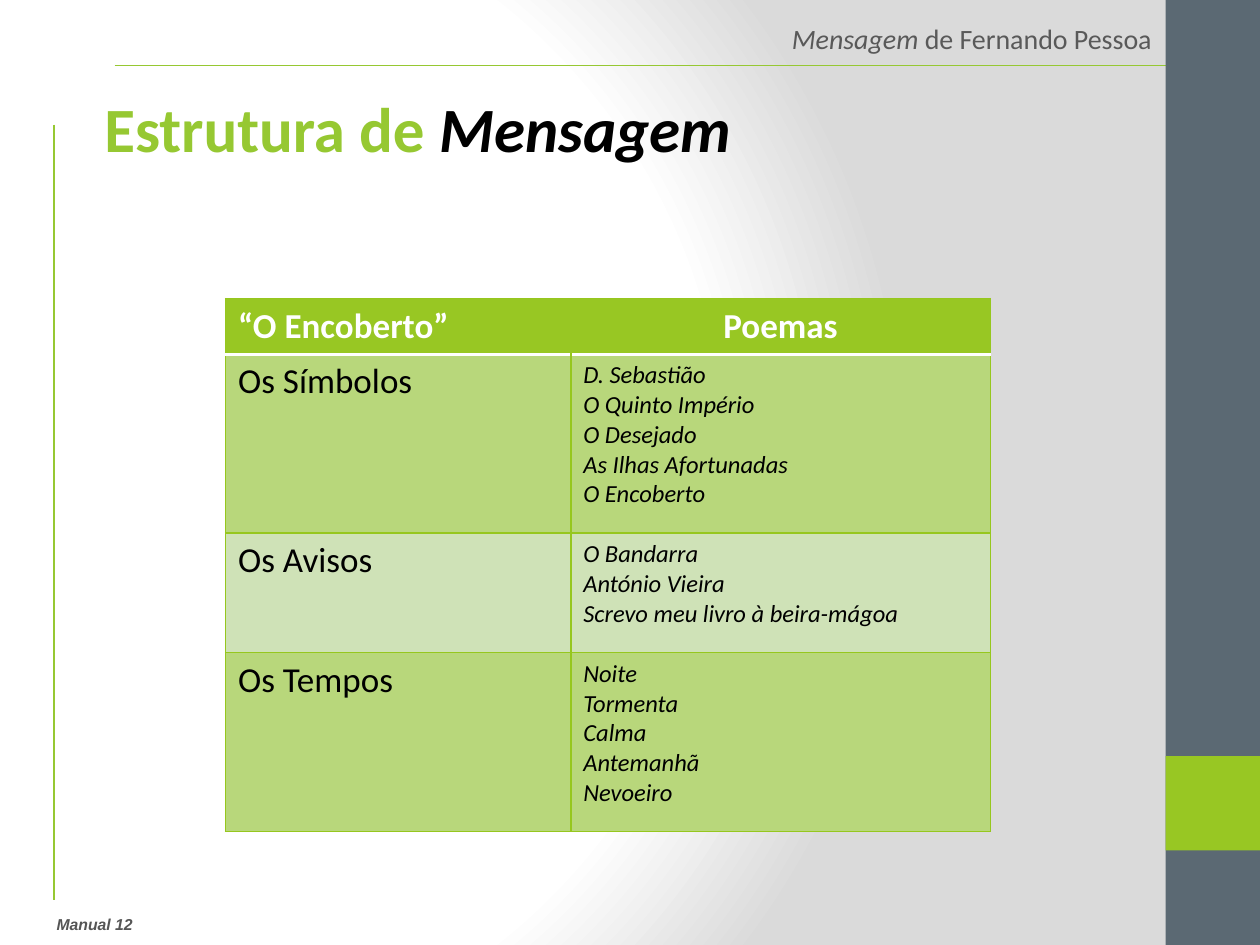
from lxml import etree
from pptx import Presentation
from pptx import oxml
from pptx.dml.color import RGBColor
from pptx.enum import shapes, text
from pptx.oxml import ns
from pptx.util import Inches, Pt

COLORS = {
    "lime": "98C723", "rule": "96C832", "border": "96C71E", "slate": "5B6973",
    "band_dark": "B8D77B", "band_light": "CFE2B7", "footer": "555555",
    "heading": "595959", "white": "FFFFFF", "black": "000000", "grey": "DADADA",
}
POEMS = [
    ("Os Símbolos", ["D. Sebastião", "O Quinto Império", "O Desejado",
                     "As Ilhas Afortunadas", "O Encoberto"]),
    ("Os Avisos", ["O Bandarra", "António Vieira", "Screvo meu livro à beira-mágoa"]),
    ("Os Tempos", ["Noite", "Tormenta", "Calma", "Antemanhã", "Nevoeiro"]),
]


class Deck:
    """Holds the style and the current slide."""

    font = "Calibri"

    def __init__(self):
        self.prs = Presentation()
        self.prs.slide_width, self.prs.slide_height = Inches(10), Inches(7.5)
        self.slide = self.prs.slides.add_slide(self.prs.slide_layouts[6])

    def color(self, name):
        return RGBColor.from_string(COLORS[name])

    def background(self, stops):
        """Radial gradient from (percent, colour name) stops."""
        self.slide.background.fill.solid()
        holder = self.slide.element.find(".//" + ns.qn("p:bgPr"))
        stop_xml = "".join(
            f'<a:gs pos="{pos * 1000}"><a:srgbClr val="{COLORS[name]}"/></a:gs>'
            for pos, name in stops)
        holder.replace(holder[0], oxml.parse_xml(
            f'<a:gradFill {ns.nsdecls("a")} rotWithShape="1"><a:gsLst>{stop_xml}</a:gsLst>'
            '<a:path path="circle"><a:fillToRect l="20000" t="50000" r="100000" b="50000"/>'
            '</a:path></a:gradFill>'))

    def rule(self, x1, y1, x2, y2):
        line = self.slide.shapes.add_connector(
            shapes.MSO_CONNECTOR.STRAIGHT, Inches(x1), Inches(y1), Inches(x2), Inches(y2))
        line.line.color.rgb = self.color("rule")
        line.line.width = Pt(1)
        etree.SubElement(line.element.spPr, ns.qn("a:effectLst"))

    def block(self, x, y, w, h, fill):
        rect = self.slide.shapes.add_shape(
            shapes.MSO_SHAPE.RECTANGLE, Inches(x), Inches(y), Inches(w), Inches(h))
        rect.shadow.inherit = False
        rect.fill.solid()
        rect.fill.fore_color.rgb = self.color(fill)
        rect.line.fill.background()

    def run(self, paragraph, words, size, color, bold=False, italic=False, font=None):
        run = paragraph.add_run()
        run.text = words
        run.font.name = font or self.font
        run.font.size = Pt(size)
        run.font.bold, run.font.italic = bold, italic
        run.font.color.rgb = self.color(color)

    def label(self, x, y, w, h, runs, align=text.PP_ALIGN.LEFT):
        box = self.slide.shapes.add_textbox(Inches(x), Inches(y), Inches(w), Inches(h))
        box.text_frame.word_wrap = True
        paragraph = box.text_frame.paragraphs[0]
        paragraph.alignment = align
        for style in runs:
            self.run(paragraph, **style)

    def cell(self, cell, lines, fill, borders, align=text.PP_ALIGN.LEFT, **style):
        """Borders map a side (L, R, T, B) to (colour, points), or to None for no line."""
        props = cell._tc.get_or_add_tcPr()
        for side in "LRTB":
            border = borders[side]
            width = f' w="{Pt(border[1])}"' if border else ""
            paint = (f'<a:solidFill><a:srgbClr val="{COLORS[border[0]]}"/></a:solidFill>'
                     if border else "<a:noFill/>")
            props.append(oxml.parse_xml(
                f'<a:ln{side} {ns.nsdecls("a")}{width}>{paint}</a:ln{side}>'))
        cell.fill.solid()
        cell.fill.fore_color.rgb = self.color(fill)
        frame = cell.text_frame
        for i, line in enumerate(lines):
            paragraph = frame.add_paragraph() if i else frame.paragraphs[0]
            paragraph.alignment = align
            self.run(paragraph, line, **style)

    def poem_table(self, x, y, widths, heights):
        table = self.slide.shapes.add_table(
            len(heights), len(widths), Inches(x), Inches(y),
            Inches(sum(widths)), Inches(sum(heights))).table
        for column, width in zip(table.columns, widths):
            column.width = Inches(width)
        for row, height in zip(table.rows, heights):
            row.height = Inches(height)

        thin, thick = ("border", 1), ("white", 2)
        header = dict(size=20, color="white", bold=True)
        self.cell(table.cell(0, 0), ["“O Encoberto”"], "lime",
                  dict(L=thin, R=None, T=thin, B=thick), **header)
        self.cell(table.cell(0, 1), ["Poemas"], "lime",
                  dict(L=None, R=thin, T=thin, B=thick),
                  align=text.PP_ALIGN.CENTER, **header)
        for i, (part, poems) in enumerate(POEMS, start=1):
            fill = "band_dark" if i % 2 else "band_light"
            borders = dict(L=thin, R=thin, T=thick if i == 1 else thin, B=thin)
            self.cell(table.cell(i, 0), [part], fill, borders, size=20, color="black")
            self.cell(table.cell(i, 1), poems, fill, borders,
                      size=14, color="black", italic=True)


def main():
    deck = Deck()
    deck.background([(0, "white"), (75, "white"), (100, "grey")])
    deck.rule(0.91, 0.52, 9.49, 0.52)
    deck.block(9.25, 0, 0.75, 7.5, "slate")
    deck.block(9.25, 6, 0.75, 0.75, "lime")
    deck.rule(0.43, 0.99, 0.43, 7.14)
    deck.label(0.35, 7.21, 5.68, 0.25, [
        dict(words="Manual 12", size=9, color="footer", bold=True, italic=True, font="Arial")])
    deck.label(0.9, 0.12, 8.34, 0.37, [
        dict(words="Mensagem ", size=16, color="heading", italic=True),
        dict(words="de Fernando Pessoa", size=16, color="heading")],
        align=text.PP_ALIGN.RIGHT)
    deck.label(0.73, 0.66, 8.43, 0.71, [
        dict(words="Estrutura de ", size=36, color="rule", bold=True),
        dict(words="Mensagem", size=36, color="black", bold=True, italic=True)])
    deck.poem_table(1.79, 2.37, [2.74, 3.33], [0.44, 1.42, 0.95, 1.42])
    deck.prs.save("out.pptx")


if __name__ == "__main__":
    main()
